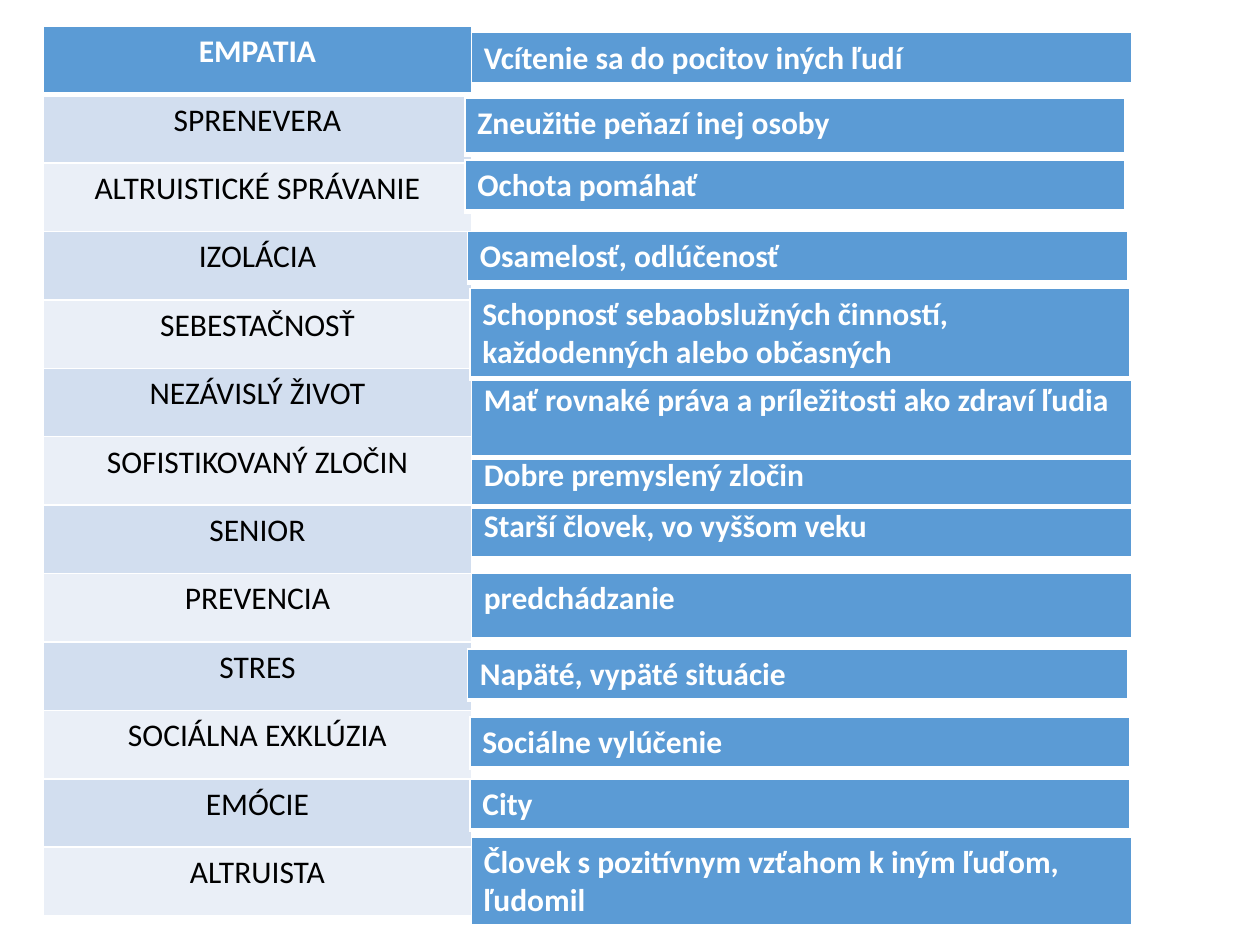
"""Build a slide that pairs a column of Slovak terms with their meanings."""
import lxml.etree
import pptx
import pptx.dml.color
import pptx.enum.text
import pptx.oxml.ns
import pptx.util

Cm = pptx.util.Cm
Pt = pptx.util.Pt
ALIGN = pptx.enum.text.PP_ALIGN

TERMS = [
    "EMPATIA", "SPRENEVERA", "ALTRUISTICKÉ SPRÁVANIE", "IZOLÁCIA",
    "SEBESTAČNOSŤ", "NEZÁVISLÝ ŽIVOT", "SOFISTIKOVANÝ ZLOČIN", "SENIOR",
    "PREVENCIA", "STRES", "SOCIÁLNA EXKLÚZIA", "EMÓCIE", "ALTRUISTA",
]

MEANINGS = [
    ("Napäté, vypäté situácie", 9.42, 13.08, 1.02),
    ("City", 9.47, 15.7, 1.02),
    ("Starší človek, vo vyššom veku", 9.5, 10.11, 1.14),
    ("Dobre premyslený zločin", 9.5, 9.07, 1.14),
    ("Mať rovnaké práva a príležitosti ako zdraví ľudia", 9.5, 7.57, 1.65),
    ("Schopnosť sebaobslužných činností, každodenných alebo občasných",
     9.47, 5.82, 1.78),
    ("Osamelosť, odlúčenosť", 9.42, 4.67, 1.02),
    ("Ochota pomáhať", 9.37, 3.23, 1.04),
    ("Človek s pozitívnym vzťahom k iným ľuďom, ľudomil", 9.5, 16.87, 1.78),
    ("Sociálne vylúčenie", 9.47, 14.45, 1.02),
    ("Zneužitie peňazí inej osoby", 9.37, 1.98, 1.14),
    ("Vcítenie sa do pocitov iných ľudí", 9.5, 0.66, 1.02),
    ("predchádzanie", 9.5, 11.56, 1.32),
]

THEME = {
    "head": "5B9BD5",
    "bands": ("EAEFF7", "D2DEEF"),
    "light": "FFFFFF",
    "dark": "000000",
    "font": {"name": "Calibri", "size": Pt(18)},
    "thin": 1,
    "thick": 3,
}


def color(code):
    """Turn a hex code into a colour."""
    return pptx.dml.color.RGBColor.from_string(code)


def edge(cell, side, width):
    """Draw one white border of a cell."""
    qn = pptx.oxml.ns.qn
    props = cell._tc.get_or_add_tcPr()
    line = lxml.etree.SubElement(props, qn("a:ln" + side), w=str(Pt(width)))
    fill = lxml.etree.SubElement(line, qn("a:solidFill"))
    lxml.etree.SubElement(fill, qn("a:srgbClr"), val=THEME["light"])


def style(cell, text, row, align):
    """Fill a cell with its text, borders and colours."""
    head = row == 0
    thin, thick = THEME["thin"], THEME["thick"]
    widths = {"L": thin, "R": thin,
              "T": thick if row == 1 else thin,
              "B": thick if head else thin}
    for side, width in widths.items():
        edge(cell, side, width)
    cell.fill.solid()
    cell.fill.fore_color.rgb = color(
        THEME["head"] if head else THEME["bands"][row % 2])
    cell.text = text
    para = cell.text_frame.paragraphs[0]
    para.alignment = align
    font = para.runs[0].font
    for key, value in {**THEME["font"], "bold": head}.items():
        setattr(font, key, value)
    font.color.rgb = color(THEME["light"] if head else THEME["dark"])


def column(slide, texts, left, top, width, height, align):
    """Add a one-column table with equal rows."""
    count = len(texts)
    box = (Cm(left), Cm(top), Cm(width), Cm(height * count))
    table = slide.shapes.add_table(count, 1, *box).table
    for row, text in enumerate(texts):
        table.rows[row].height = Cm(height)
        style(table.cell(row, 0), text, row, align)


def main():
    """Build and save the deck."""
    deck = pptx.Presentation()
    deck.slide_width, deck.slide_height = Cm(25.4), Cm(19.05)
    slide = deck.slides.add_slide(deck.slide_layouts[6])
    column(slide, TERMS, 0.87, 0.53, 8.64, 1.38, ALIGN.CENTER)
    for text, left, top, height in MEANINGS:
        column(slide, [text], left, top, 13.31, height, ALIGN.LEFT)
    deck.save("out.pptx")


if __name__ == "__main__":
    main()
